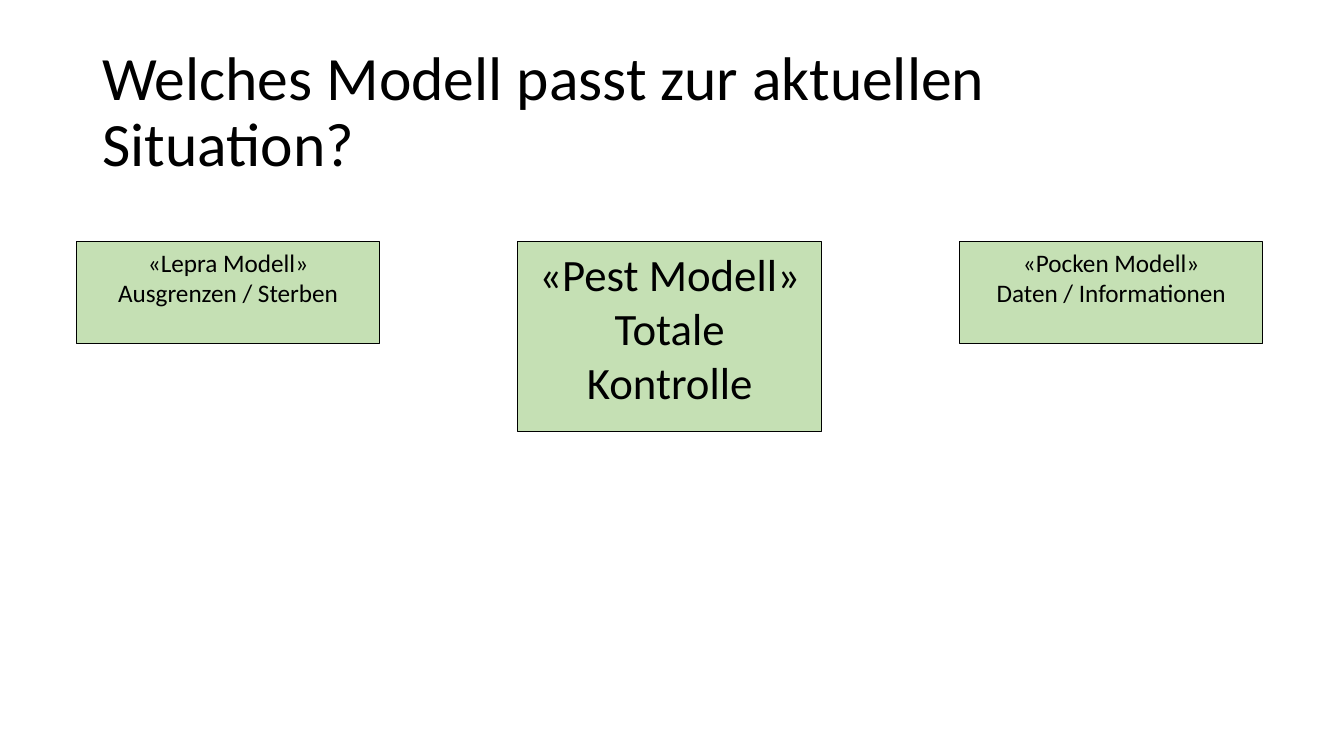
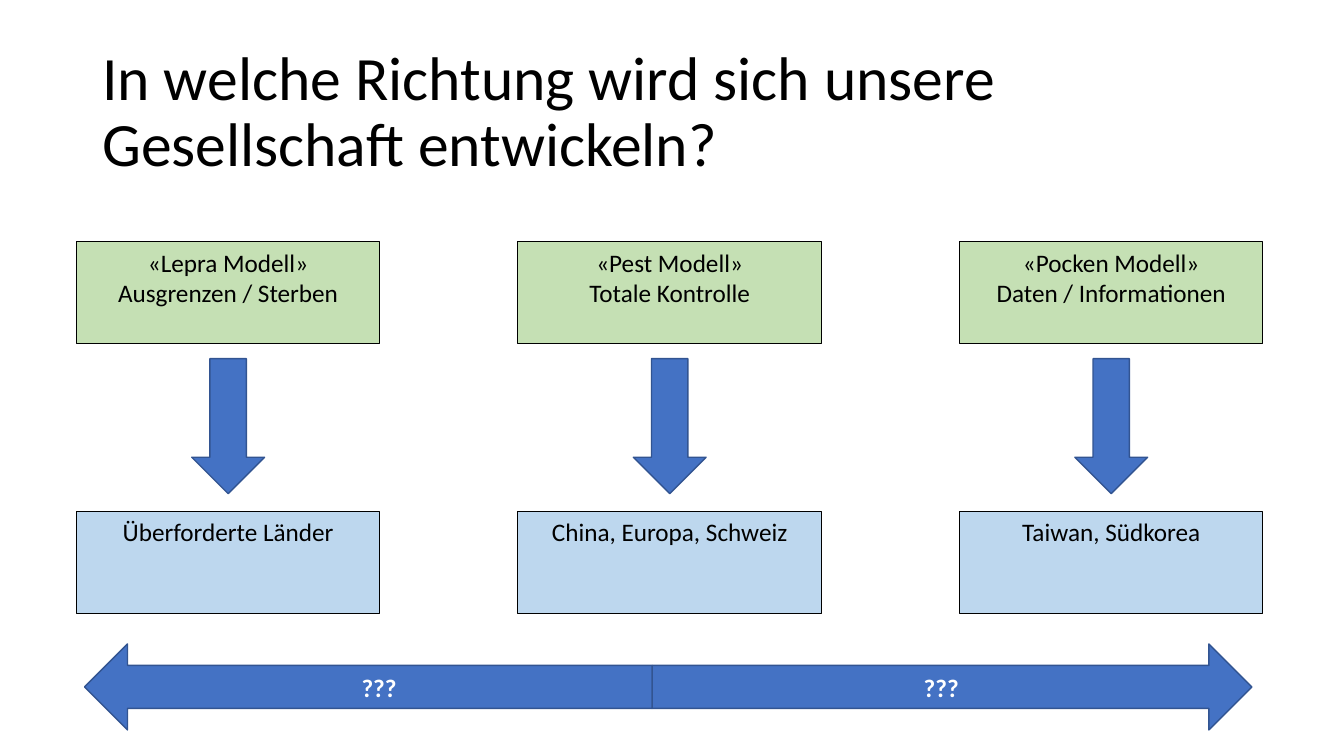
from dataclasses import dataclass

from pptx import Presentation
from pptx.dml.color import RGBColor
from pptx.enum.shapes import MSO_SHAPE as Shape
from pptx.enum.text import MSO_ANCHOR as Anchor, PP_ALIGN as Align
from pptx.util import Pt


@dataclass(frozen=True)
class Theme:
    font: str = "Calibri"
    text: str = "000000"
    light_text: str = "FFFFFF"
    model_fill: str = "C5E0B4"
    country_fill: str = "BDD7EE"
    box_line: str = "000000"
    arrow_fill: str = "4472C4"
    arrow_line: str = "325491"
    title_size: int = 44
    emphasis_size: int = 32
    body_size: int = 18


THEME = Theme()

MODELS = [
    ("«Lepra Modell»", "Ausgrenzen / Sterben"),
    ("«Pest Modell»", "Totale Kontrolle"),
    ("«Pocken Modell»", "Daten / Informationen"),
]
COUNTRIES = ["Überforderte Länder", "China, Europa, Schweiz", "Taiwan, Südkorea"]
MODEL_TITLE = "Welches Modell passt zur aktuellen Situation?"
DIRECTION_TITLE = "In welche Richtung wird sich unsere Gesellschaft entwickeln?"
EMPHASISED_MODEL = 1
DIRECTIONS = [  # shape, left, width
    (Shape.RIGHT_ARROW, 465.8, 428.4),
    (Shape.LEFT_ARROW, 60.4, 405.4),
]
DIRECTION_LABEL = "???"

SLIDE_SIZE = (960, 540)
TITLE_AREA = (66, 28.8, 828, 104.4)
COLUMN_LEFT, COLUMN_PITCH = 54.6, 315.4
BOX_WIDTH, BOX_HEIGHT, EMPHASIS_HEIGHT = 216.8, 72.8, 135.4
MODEL_TOP, COUNTRY_TOP = 172.8, 365.6
DOWN_WIDTH, DOWN_HEIGHT, DOWN_TOP = 52, 96.4, 256.2
DIRECTION_TOP, DIRECTION_HEIGHT = 460, 61.4


def column_left(column, width=BOX_WIDTH):
    """Left edge of an item of this width, centred in its column."""
    return COLUMN_LEFT + column * COLUMN_PITCH + (BOX_WIDTH - width) / 2


def write(shape, lines, size, color, align, anchor, bold=False):
    frame = shape.text_frame
    frame.word_wrap = True
    frame.vertical_anchor = anchor
    frame.text = "\n".join(lines)
    for paragraph in frame.paragraphs:
        paragraph.alignment = align
        font = paragraph.font
        font.name, font.size, font.bold = THEME.font, Pt(size), bold
        font.color.rgb = RGBColor.from_string(color)


def add_figure(slide, kind, area, fill, line, line_width):
    shape = slide.shapes.add_shape(kind, *map(Pt, area))
    shape.shadow.inherit = False
    shape.fill.solid()
    shape.fill.fore_color.rgb = RGBColor.from_string(fill)
    shape.line.color.rgb = RGBColor.from_string(line)
    shape.line.width = Pt(line_width)
    return shape


def add_box(slide, column, top, lines, fill, height=BOX_HEIGHT, size=THEME.body_size):
    area = (column_left(column), top, BOX_WIDTH, height)
    box = add_figure(slide, Shape.RECTANGLE, area, fill, THEME.box_line, 0.75)
    write(box, lines, size, THEME.text, Align.CENTER, Anchor.TOP)


def add_arrow(slide, kind, area):
    return add_figure(slide, kind, area, THEME.arrow_fill, THEME.arrow_line, 1)


def add_models(slide, emphasised=None):
    for column, lines in enumerate(MODELS):
        style = {}
        if column == emphasised:
            style = {"height": EMPHASIS_HEIGHT, "size": THEME.emphasis_size}
        add_box(slide, column, MODEL_TOP, lines, THEME.model_fill, **style)


def add_titled_slide(presentation, title):
    slide = presentation.slides.add_slide(presentation.slide_layouts[6])
    box = slide.shapes.add_textbox(*map(Pt, TITLE_AREA))
    write(box, [title], THEME.title_size, THEME.text, Align.LEFT, Anchor.MIDDLE)
    box.text_frame.paragraphs[0].line_spacing = 0.9
    return slide


def build_model_slide(presentation):
    slide = add_titled_slide(presentation, MODEL_TITLE)
    add_models(slide, EMPHASISED_MODEL)


def build_direction_slide(presentation):
    slide = add_titled_slide(presentation, DIRECTION_TITLE)
    for column, countries in enumerate(COUNTRIES):
        add_box(slide, column, COUNTRY_TOP, [countries], THEME.country_fill)
        left = column_left(column, DOWN_WIDTH)
        add_arrow(slide, Shape.DOWN_ARROW, (left, DOWN_TOP, DOWN_WIDTH, DOWN_HEIGHT))
    for kind, left, width in DIRECTIONS:
        arrow = add_arrow(slide, kind, (left, DIRECTION_TOP, width, DIRECTION_HEIGHT))
        write(arrow, [DIRECTION_LABEL], THEME.body_size, THEME.light_text,
              Align.CENTER, Anchor.MIDDLE, bold=True)
    add_models(slide)


def main():
    presentation = Presentation()
    presentation.slide_width, presentation.slide_height = map(Pt, SLIDE_SIZE)
    build_model_slide(presentation)
    build_direction_slide(presentation)
    presentation.save("out.pptx")


if __name__ == "__main__":
    main()
